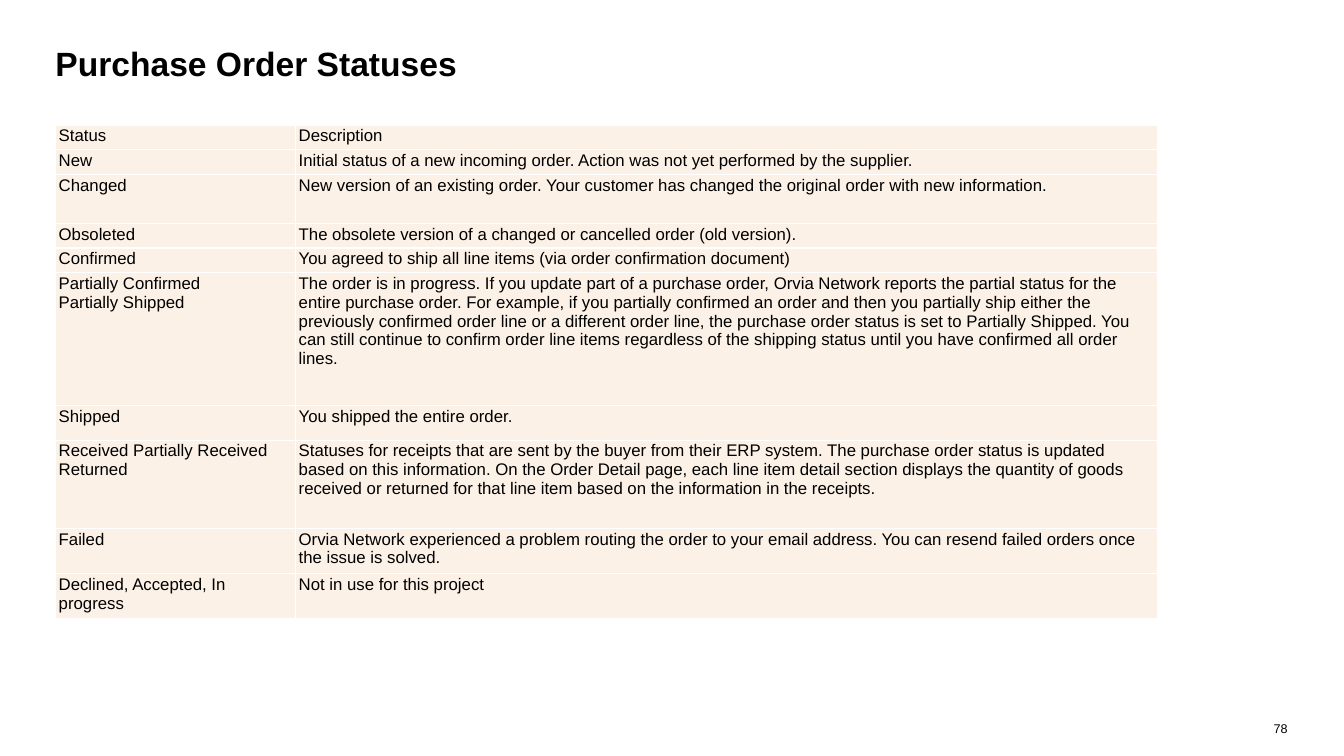
from dataclasses import dataclass

from lxml.etree import SubElement
from pptx import Presentation
from pptx.dml.color import RGBColor
from pptx.enum.text import PP_ALIGN
from pptx.oxml.ns import qn
from pptx.util import Cm, Pt


@dataclass(frozen=True)
class Theme:
    font: str = "Arial"
    ink: str = "000000"
    cell: str = "FCF1E7"
    rule: str = "FFFFFF"
    head: float = 24
    body: float = 12
    foot: float = 9


@dataclass(frozen=True)
class Box:
    left: float
    top: float
    width: float
    height: float

    def place(self):
        return Cm(self.left), Cm(self.top), Cm(self.width), Cm(self.height)


THEME = Theme()
COLS = (6.05, 21.72)
ROWS = (
    (0.62, "Status", "Description"),
    (0.62, "New", "Initial status of a new incoming order. Action was not yet "
     "performed by the supplier."),
    (1.24, "Changed", "New version of an existing order. Your customer has changed "
     "the original order with new information."),
    (0.62, "Obsoleted", "The obsolete version of a changed or cancelled order "
     "(old version)."),
    (0.62, "Confirmed", "You agreed to ship all line items (via order confirmation "
     "document)"),
    (3.35, "Partially Confirmed\nPartially Shipped",
     "The order is in progress. If you update part of a purchase order, Orvia Network "
     "reports the partial status for the entire purchase order. For example, if you "
     "partially confirmed an order and then you partially ship either the previously "
     "confirmed order line or a different order line, the purchase order status is set "
     "to Partially Shipped. You can still continue to confirm order line items "
     "regardless of the shipping status until you have confirmed all order lines."),
    (0.87, "Shipped", "You shipped the entire order."),
    (2.22, "Received Partially Received\nReturned",
     "Statuses for receipts that are sent by the buyer from their ERP system. The "
     "purchase order status is updated based on this information. On the Order Detail "
     "page, each line item detail section displays the quantity of goods received or "
     "returned for that line item based on the information in the receipts."),
    (1.14, "Failed", "Orvia Network experienced a problem routing the order to your "
     "email address. You can resend failed orders once the issue is solved."),
    (1.14, "Declined, Accepted, In progress", "Not in use for this project"),
)


def style(frame, size, bold=False, align=PP_ALIGN.LEFT):
    for para in frame.paragraphs:
        para.alignment = align
        para.font.name = THEME.font
        para.font.size = Pt(size)
        para.font.bold = bold
        para.font.color.rgb = RGBColor.from_string(THEME.ink)


def add_label(slide, box, text, size, bold=False, align=PP_ALIGN.LEFT):
    frame = slide.shapes.add_textbox(*box.place()).text_frame
    frame.margin_left = frame.margin_right = 0
    frame.margin_top = frame.margin_bottom = 0
    frame.word_wrap = True
    frame.text = text
    style(frame, size, bold, align)


def add_rules(cell):
    props = cell._tc.get_or_add_tcPr()
    for index, side in enumerate(("lnL", "lnR", "lnT", "lnB")):
        line = props.makeelement(qn(f"a:{side}"), {"w": str(Pt(1))})
        fill = SubElement(line, qn("a:solidFill"))
        SubElement(fill, qn("a:srgbClr"), val=THEME.rule)
        props.insert(index, line)


def fill_cell(cell, text):
    cell.margin_left = cell.margin_right = Cm(0.08)
    cell.margin_top = cell.margin_bottom = Cm(0.04)
    cell.fill.solid()
    cell.fill.fore_color.rgb = RGBColor.from_string(THEME.cell)
    add_rules(cell)
    cell.text = text
    style(cell.text_frame, THEME.body)


def add_grid(slide, box):
    table = slide.shapes.add_table(len(ROWS), len(COLS), *box.place()).table
    table.first_row = table.horz_banding = False
    for col, width in zip(table.columns, COLS):
        col.width = Cm(box.width * width / sum(COLS))
    for row, (height, *texts) in zip(table.rows, ROWS):
        row.height = Cm(height)
        for cell, text in zip(row.cells, texts):
            fill_cell(cell, text)


def main():
    deck = Presentation()
    deck.slide_width, deck.slide_height = Cm(33.88), Cm(19.05)
    slide = deck.slides.add_slide(deck.slide_layouts[6])
    add_label(slide, Box(1.4, 1.07, 31.06, 1.02), "Purchase Order Statuses",
              THEME.head, bold=True)
    add_grid(slide, Box(1.4, 3.15, sum(COLS), sum(row[0] for row in ROWS)))
    add_label(slide, Box(31.46, 18.16, 1, 0.38), "78", THEME.foot,
              align=PP_ALIGN.RIGHT)
    deck.save("out.pptx")


if __name__ == "__main__":
    main()
